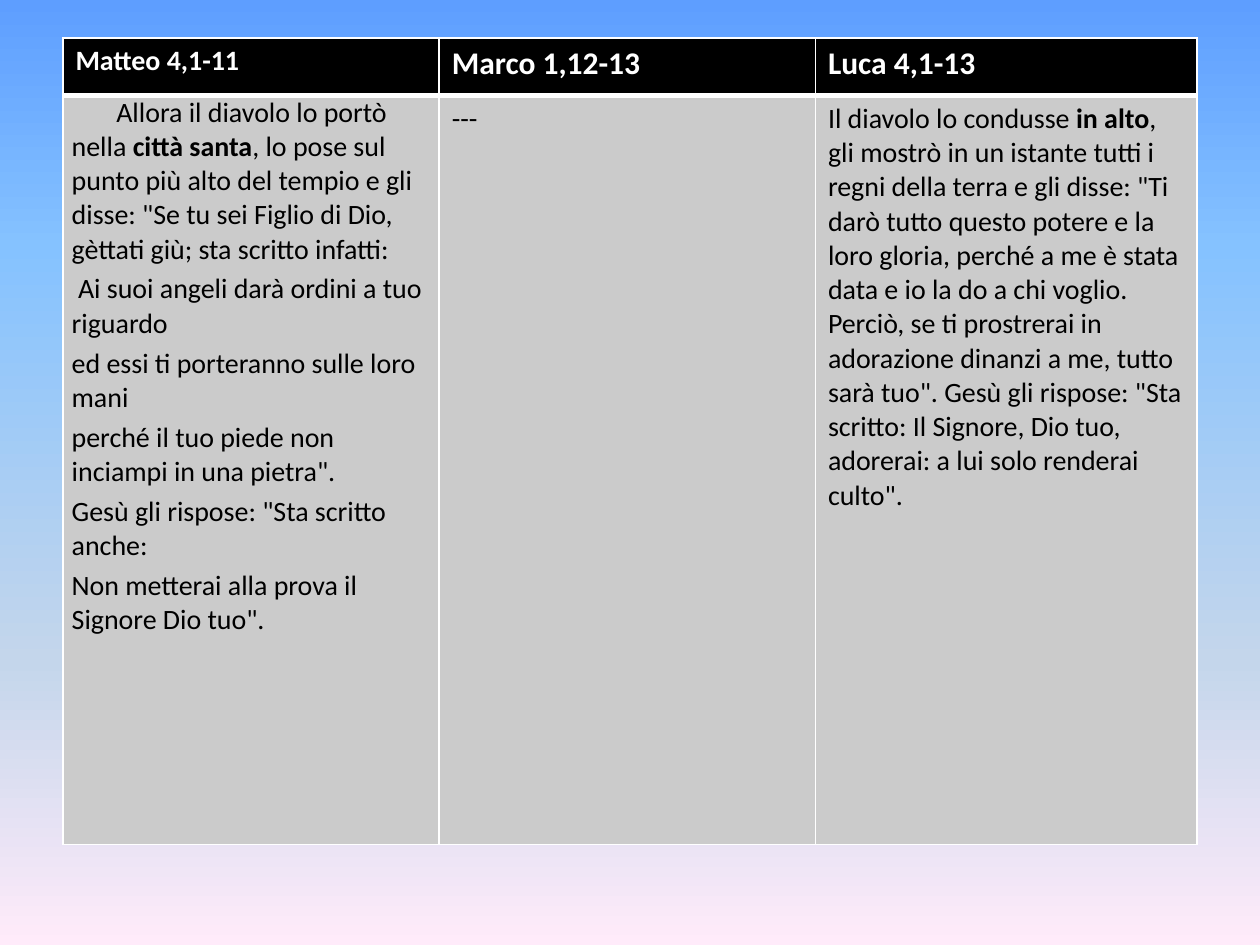
"""Build a slide with a table comparing three Gospel accounts of the temptation."""
from lxml.etree import SubElement as Sub
from pptx import Presentation
from pptx.dml.color import RGBColor as RGB
from pptx.oxml.ns import qn
from pptx.util import Pt

COLORS = {"white": "FFFFFF", "black": "000000", "gray": "CBCBCB"}
SKY = [(0, "5E9EFF"), (26, "85C2FF"), (70, "C4D6EB"), (100, "FFEBFA")]
COLUMNS = [215, 215, 218]
ROWS = [33, 428]
HEADERS = [("Matteo 4,1-11", 16), ("Marco 1,12-13", 18), ("Luca 4,1-13", 18)]
MATTEO = [
    ["Allora il diavolo lo portò nella ", "città santa",
     ", lo pose sul punto più alto del tempio e gli disse: \"Se tu sei Figlio di Dio, "
     "gèttati giù; sta scritto infatti:"],
    [" Ai suoi angeli darà ordini a tuo riguardo"],
    ["ed essi ti porteranno sulle loro mani"],
    ["perché il tuo piede non inciampi in una pietra\"."],
    ["Gesù gli rispose: \"Sta scritto anche:"],
    ["Non metterai alla prova il Signore Dio tuo\"."],
]
LUCA = [
    ["Il diavolo lo condusse ", "in alto",
     ", gli mostrò in un istante tutti i regni della terra e gli disse: \"Ti darò tutto "
     "questo potere e la loro gloria, perché a me è stata data e io la do a chi voglio. "
     "Perciò, se ti prostrerai in adorazione dinanzi a me, tutto sarà tuo\". Gesù gli "
     "rispose: \"Sta scritto: Il Signore, Dio tuo, adorerai: a lui solo renderai culto\"."],
]
BODIES = [MATTEO, [["---"]], LUCA]


def style_cell(cell, fill, borders):
    tc_pr = cell._tc.get_or_add_tcPr()
    for side, width in borders.items():
        ln = Sub(tc_pr, qn(f"a:ln{side}"), w=str(Pt(width)))
        Sub(Sub(ln, qn("a:solidFill")), qn("a:srgbClr"), val=COLORS["white"])
    cell.fill.solid()
    cell.fill.fore_color.rgb = RGB.from_string(COLORS[fill])


def add_run(p, text, color, **font):
    r = p.add_run()
    r.text = text
    r.font.color.rgb = RGB.from_string(COLORS[color])
    for name, value in {"name": "Calibri", **font}.items():
        setattr(r.font, name, value)


prs = Presentation()
prs.slide_width, prs.slide_height = Pt(720), Pt(540)
s = prs.slides.add_slide(prs.slide_layouts[6])

bg = s.background.fill
bg.gradient()
bg.gradient_angle = 270
stops = s._element.find(f".//{qn('a:gsLst')}")
for stop in list(stops):
    stops.remove(stop)
for pos, color in SKY:
    Sub(Sub(stops, qn("a:gs"), pos=str(pos * 1000)), qn("a:srgbClr"), val=color)

table = s.shapes.add_table(2, 3, Pt(36), Pt(21.6), Pt(sum(COLUMNS)), Pt(sum(ROWS))).table
for column, width in zip(table.columns, COLUMNS):
    column.width = Pt(width)
for row, height in zip(table.rows, ROWS):
    row.height = Pt(height)

for col, (title, size) in enumerate(HEADERS):
    cell = table.cell(0, col)
    style_cell(cell, "black", {"L": 1, "R": 1, "T": 1, "B": 3})
    add_run(cell.text_frame.paragraphs[0], title, "white", size=Pt(size), bold=True)

for col, body in enumerate(BODIES):
    cell = table.cell(1, col)
    style_cell(cell, "gray", {"L": 1, "R": 1, "T": 3, "B": 1})
    tf = cell.text_frame
    for i, parts in enumerate(body):
        p = tf.add_paragraph() if i else tf.paragraphs[0]
        if body is MATTEO:
            p.space_before = Pt(3.2)
        for j, text in enumerate(parts):
            add_run(p, text, "black", size=Pt(16), bold=j == 1)

matteo = table.cell(1, 0)
margins = {"margin_left": 5, "margin_right": 5, "margin_top": 0, "margin_bottom": 0}
for name, value in margins.items():
    setattr(matteo, name, Pt(value))
matteo.text_frame.paragraphs[0]._p.get_or_add_pPr().set("indent", str(Pt(25.5)))

prs.save("out.pptx")
